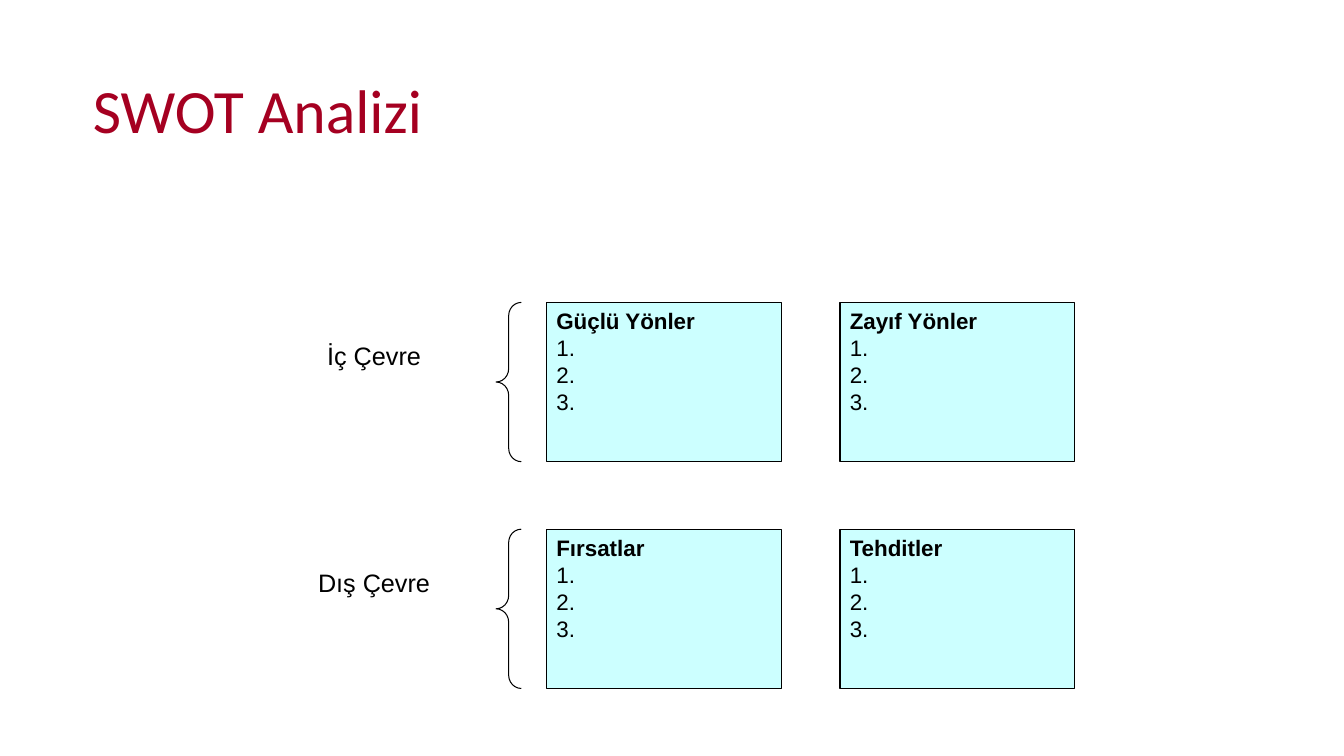
from dataclasses import dataclass

from pptx import Presentation
from pptx.dml.color import RGBColor
from pptx.enum.shapes import MSO_SHAPE as Shape
from pptx.enum.text import MSO_ANCHOR as Anchor, PP_ALIGN as Align
from pptx.util import Inches, Pt

TITLE = "SWOT Analizi"
ENVIRONMENTS = [
    ("İç Çevre", ["Güçlü Yönler", "Zayıf Yönler"]),
    ("Dış Çevre", ["Fırsatlar", "Tehditler"]),
]
ITEMS = ["1.", "2.", "3."]


@dataclass(frozen=True)
class Theme:
    title_color: RGBColor = RGBColor(0xA5, 0x00, 0x21)
    ink: RGBColor = RGBColor(0x00, 0x00, 0x00)
    box_fill: RGBColor = RGBColor(0xCC, 0xFF, 0xFF)
    title_font: str = "Calibri"
    body_font: str = "Arial"
    title_size: float = 44
    label_size: float = 18
    box_size: float = 16
    box_line: float = 1
    brace_line: float = 0.75


THEME = Theme()

ROW_TOP, ROW_STEP, ROW_HEIGHT = 3.0, 2.25, 1.58
BOX_LEFT, BOX_STEP, BOX_WIDTH = 5.42, 2.91, 2.33
BRACE_LEFT, BRACE_WIDTH = 4.92, 0.25
LABEL_LEFT, LABEL_WIDTH, LABEL_HEIGHT, LABEL_DROP = 3.05, 1.32, 0.4, 0.33


def add_span(para, text, size, font=THEME.body_font, color=THEME.ink, bold=False):
    span = para.add_run()
    span.text = text
    span.font.name = font
    span.font.size = Pt(size)
    span.font.bold = bold
    span.font.color.rgb = color


def add_title(page):
    title = page.shapes.title
    title.left, title.top = Inches(0.92), Inches(0.4)
    title.width, title.height = Inches(11.5), Inches(1.45)
    frame = title.text_frame
    frame.margin_left = frame.margin_right = 0
    frame.margin_top = frame.margin_bottom = 0
    frame.vertical_anchor = Anchor.MIDDLE
    para = frame.paragraphs[0]
    para.alignment = Align.LEFT
    para.line_spacing = 0.9
    add_span(para, TITLE, THEME.title_size, THEME.title_font, THEME.title_color)


def add_outlined(page, kind, left, top, width, line_width):
    shape = page.shapes.add_shape(
        kind, Inches(left), Inches(top), Inches(width), Inches(ROW_HEIGHT))
    shape.shadow.inherit = False
    shape.line.color.rgb = THEME.ink
    shape.line.width = Pt(line_width)
    return shape


def add_label(page, text, top):
    label = page.shapes.add_textbox(
        Inches(LABEL_LEFT), Inches(top), Inches(LABEL_WIDTH), Inches(LABEL_HEIGHT))
    label.text_frame.word_wrap = False
    para = label.text_frame.paragraphs[0]
    para.alignment = Align.CENTER
    add_span(para, text, THEME.label_size)


def add_brace(page, top):
    brace = add_outlined(
        page, Shape.LEFT_BRACE, BRACE_LEFT, top, BRACE_WIDTH, THEME.brace_line)
    brace.fill.background()
    brace.adjustments[0] = 0.528


def add_box(page, heading, left, top):
    box = add_outlined(page, Shape.RECTANGLE, left, top, BOX_WIDTH, THEME.box_line)
    box.fill.solid()
    box.fill.fore_color.rgb = THEME.box_fill
    frame = box.text_frame
    frame.word_wrap = True
    frame.vertical_anchor = Anchor.TOP
    for index, text in enumerate([heading, *ITEMS]):
        para = frame.add_paragraph() if index else frame.paragraphs[0]
        para.alignment = Align.LEFT
        add_span(para, text, THEME.box_size, bold=index == 0)


def main():
    deck = Presentation()
    deck.slide_width, deck.slide_height = Inches(13.33), Inches(7.5)
    page = deck.slides.add_slide(deck.slide_layouts[5])
    add_title(page)
    for row, (environment, headings) in enumerate(ENVIRONMENTS):
        top = ROW_TOP + row * ROW_STEP
        add_label(page, environment, top + LABEL_DROP)
        add_brace(page, top)
        for column, heading in enumerate(headings):
            add_box(page, heading, BOX_LEFT + column * BOX_STEP, top)
    deck.save("out.pptx")


if __name__ == "__main__":
    main()
